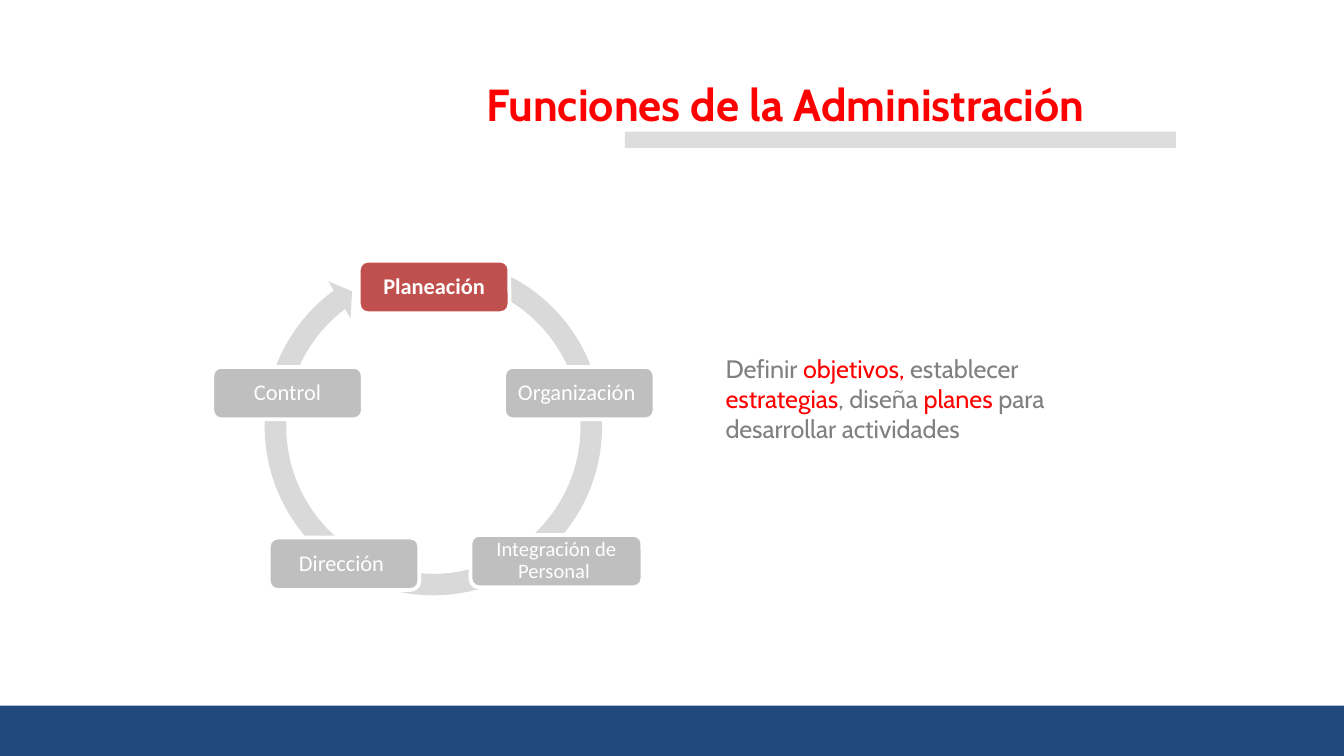
from pptx import Presentation
from pptx.dml.color import RGBColor
from pptx.enum.shapes import MSO_SHAPE as Preset
from pptx.enum.text import MSO_ANCHOR as Anchor, PP_ALIGN as Align
from pptx.util import Inches, Pt

WHITE = RGBColor(0xFF, 0xFF, 0xFF)
RED = RGBColor(0xFF, 0x00, 0x00)
BRICK = RGBColor(0xC0, 0x50, 0x4D)
NAVY = RGBColor(0x1F, 0x49, 0x7D)
RULE_GRAY = RGBColor(0xDD, 0xDD, 0xDD)
RING_GRAY = RGBColor(0xD9, 0xD9, 0xD9)
STEP_GRAY = RGBColor(0xBF, 0xBF, 0xBF)
TEXT_GRAY = RGBColor(0x80, 0x80, 0x80)

COLUMNS, ROWS = 100, 56.25
STEP_HEIGHT = 3.9


class SlideBuilder:
    """Places elements on a grid of 100 columns by 56.25 rows."""

    heading_font = "Cabin"
    step_font = "Calibri"

    def __init__(self, deck):
        self.slide = deck.slides.add_slide(deck.slide_layouts[6])
        self.column = deck.slide_width / COLUMNS
        self.row = deck.slide_height / ROWS

    def place(self, left, top, width, height):
        return [int(n) for n in (left * self.column, top * self.row,
                                 width * self.column, height * self.row)]

    def block(self, preset, area, color, adjustments=()):
        block = self.slide.shapes.add_shape(preset, *self.place(*area))
        block.shadow.inherit = False
        block.fill.solid()
        block.fill.fore_color.rgb = color
        block.line.fill.background()
        for index, value in enumerate(adjustments):
            block.adjustments[index] = value
        return block

    def add_words(self, paragraph, words, color, **font_format):
        run = paragraph.add_run()
        run.text = words
        run.font.color.rgb = color
        for name, value in font_format.items():
            setattr(run.font, name, value)

    def step(self, words, left, top, width=11.2, color=STEP_GRAY, size=12, bold=False):
        box = self.block(Preset.ROUNDED_RECTANGLE, (left, top, width, STEP_HEIGHT), color)
        box.line.color.rgb = WHITE
        box.line.width = Pt(2)
        frame = box.text_frame
        frame_format = {"word_wrap": True, "vertical_anchor": Anchor.MIDDLE}
        for side in ("left", "top", "right", "bottom"):
            frame_format[f"margin_{side}"] = Inches(0.07)
        for name, value in frame_format.items():
            setattr(frame, name, value)
        label = frame.paragraphs[0]
        label.alignment = Align.CENTER
        label.line_spacing = 0.9
        self.add_words(label, words, WHITE, name=self.step_font, size=Pt(size), bold=bold)

    def text(self, area, pieces, size, bold=False):
        """Set (words, color) pieces as one paragraph."""
        frame = self.slide.shapes.add_textbox(*self.place(*area)).text_frame
        frame.word_wrap = True
        for words, color in pieces:
            self.add_words(frame.paragraphs[0], words, color,
                           name=self.heading_font, size=Pt(size), bold=bold)


def main():
    deck = Presentation()
    deck.slide_width, deck.slide_height = Inches(10), Inches(5.625)
    page = SlideBuilder(deck)

    page.block(Preset.RECTANGLE, (0, 52.5, COLUMNS, ROWS - 52.5), NAVY)
    page.block(Preset.RECTANGLE, (46.5, 9.8, 41, 1.2), RULE_GRAY)
    page.text((35.2, 5.2, 55.2, 5), [("Funciones de la Administración", RED)], 24, bold=True)

    page.block(Preset.CIRCULAR_ARROW, (18.9, 18.4, 26.7, 26.7), RING_GRAY,
               (0.06, 3.31, 140.09, 172.46, 0.06))
    page.step("Planeación", 26.7, 19.4, color=BRICK, bold=True)
    page.step("Organización ", 37.5, 27.3)
    page.step("Integración de Personal ", 35, 39.8, width=12.8, size=11)
    page.step("Dirección ", 20, 40)
    page.step("Control", 15.8, 27.3)

    page.text((53, 25.8, 32.5, 7.8), [
        ("Definir ", TEXT_GRAY), ("objetivos,", RED), (" establecer ", TEXT_GRAY),
        ("estrategias", RED), (", diseña ", TEXT_GRAY), ("planes ", RED),
        ("para desarrollar actividades", TEXT_GRAY)], 13.5)

    deck.save("out.pptx")


if __name__ == "__main__":
    main()
